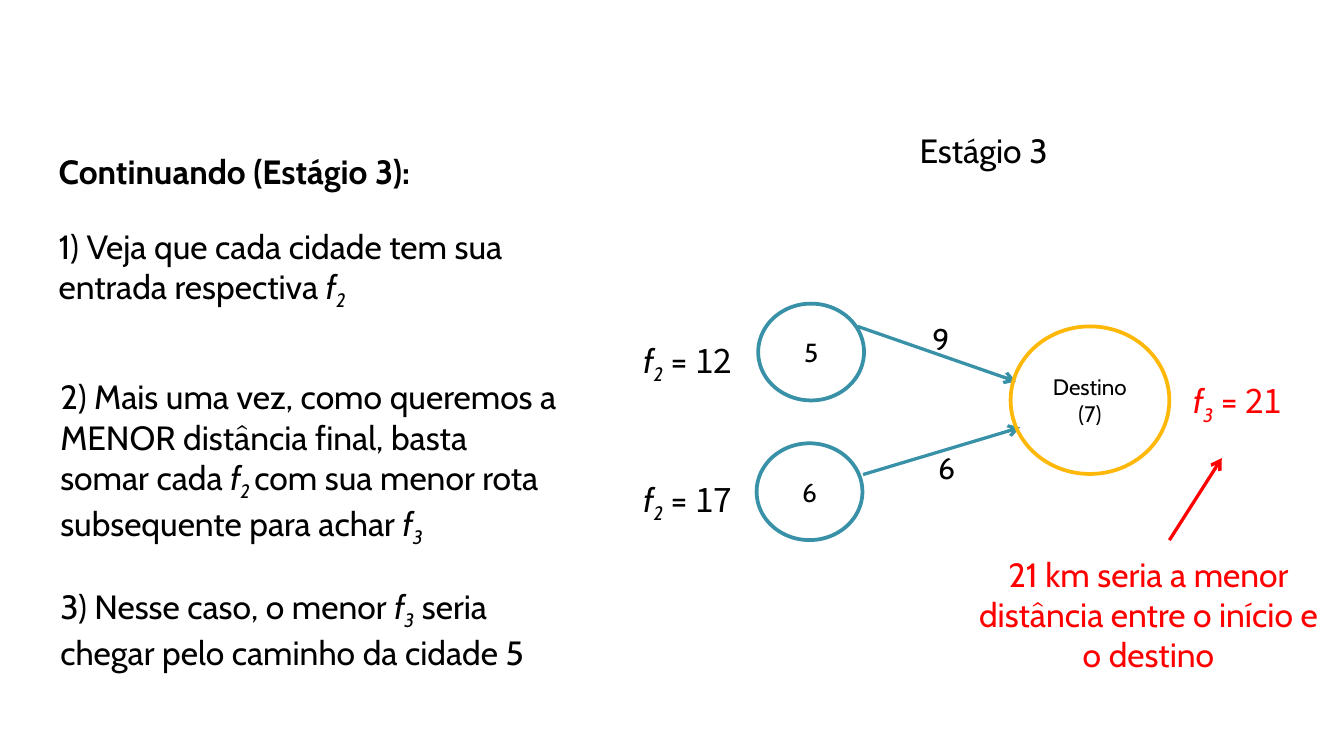
from dataclasses import dataclass

import pptx
import pptx.dml.color
import pptx.enum.shapes
import pptx.enum.text
import pptx.oxml
import pptx.oxml.ns
import pptx.util

Cm = pptx.util.Cm
Pt = pptx.util.Pt
ALIGN = pptx.enum.text.PP_ALIGN

COLORS = {"text": "000000", "city": "3891A7", "goal": "FEB80A", "result": "FF0000"}
FONT = "Cabin"
NUMBER_FONT = "Noto Sans CJK SC"


@dataclass
class Run:
    text: str
    font: str = FONT
    bold: bool = False
    italic: bool = False
    sub: bool = False


@dataclass
class Label:
    x: float
    y: float
    w: float
    h: float
    runs: list[Run]
    size: int = 18
    color: str = "text"
    center: bool = False


@dataclass
class Node:
    x: float
    y: float
    w: float
    h: float
    lines: list[str]
    size: int
    color: str


@dataclass
class Arrow:
    x1: float
    y1: float
    x2: float
    y2: float
    color: str


def rgb(name: str) -> pptx.dml.color.RGBColor:
    return pptx.dml.color.RGBColor.from_string(COLORS[name])


def f(index: str) -> list[Run]:
    """The symbol f with a subscript index."""
    return [Run("f", italic=True), Run(index, italic=True, sub=True)]


def f_value(index: str, value: str) -> list[Run]:
    return [*f(index), Run(" = "), Run(value, font=NUMBER_FONT)]


def add_runs(p, runs: list[Run], size: int, color: str, center: bool) -> None:
    p.alignment = ALIGN.CENTER if center else ALIGN.LEFT
    for run in runs:
        r = p.add_run()
        r.text = run.text
        r.font.name = run.font
        r.font.size = Pt(size)
        r.font.bold = run.bold
        r.font.italic = run.italic
        r.font.color.rgb = rgb(color)
        if run.sub:
            r.font._element.set("baseline", "-25000")


def draw_label(s, label: Label) -> None:
    sp = s.shapes.add_textbox(Cm(label.x), Cm(label.y), Cm(label.w), Cm(label.h))
    tf = sp.text_frame
    tf.word_wrap = True
    add_runs(tf.paragraphs[0], label.runs, label.size, label.color, label.center)


def draw_node(s, node: Node) -> None:
    sp = s.shapes.add_shape(pptx.enum.shapes.MSO_SHAPE.OVAL,
                            Cm(node.x), Cm(node.y), Cm(node.w), Cm(node.h))
    sp.shadow.inherit = False
    sp.fill.background()
    sp.line.color.rgb = rgb(node.color)
    sp.line.width = Pt(2)
    tf = sp.text_frame
    tf.word_wrap = True
    tf.vertical_anchor = pptx.enum.text.MSO_ANCHOR.MIDDLE
    for i, line in enumerate(node.lines):
        p = tf.add_paragraph() if i else tf.paragraphs[0]
        add_runs(p, [Run(line)], node.size, "text", center=True)


def draw_arrow(s, arrow: Arrow) -> None:
    sp = s.shapes.add_connector(pptx.enum.shapes.MSO_CONNECTOR.STRAIGHT,
                                Cm(arrow.x1), Cm(arrow.y1), Cm(arrow.x2), Cm(arrow.y2))
    sp.line.color.rgb = rgb(arrow.color)
    sp.line.width = Pt(1.75)
    tail = pptx.oxml.parse_xml(f'<a:tailEnd {pptx.oxml.ns.nsdecls("a")} type="arrow"/>')
    sp.line._get_or_add_ln().append(tail)
    effects = pptx.oxml.parse_xml(f'<a:effectLst {pptx.oxml.ns.nsdecls("a")}/>')
    sp._element.spPr.append(effects)


# Headings and explanation on the left
EXPLANATION = [
    Label(15.49, 2.34, 6.2, 1.02, [Run("Estágio 3")], center=True),
    Label(0.86, 2.72, 9.4, 1.02, [Run("Continuando (Estágio 3):", bold=True)]),
    Label(0.86, 4.14, 10, 1.8,
          [Run("1) Veja que cada cidade tem sua entrada respectiva "), *f("2")]),
    Label(0.89, 6.99, 10, 3.33,
          [Run("2) Mais uma vez, como queremos a MENOR distância final, "
               "basta somar cada "), *f("2 "),
           Run("com sua menor rota subsequente para achar "), *f("3")]),
    Label(0.89, 10.95, 10, 1.8,
          [Run("3) Nesse caso, o menor "), *f("3"),
           Run(" seria chegar pelo caminho da cidade 5")]),
]

# Route graph
ARROWS = [
    Arrow(16.31, 8.97, 19.28, 8.08, "city"),
    Arrow(16.21, 6.17, 19.2, 7.21, "city"),
    Arrow(22.1, 10.21, 23.09, 8.66, "result"),
]
NODES = [
    Node(19.1, 6.17, 3, 2.79, ["Destino", "(7)"], 12, "goal"),
    Node(14.33, 5.74, 2, 1.83, ["5"], 14, "city"),
    Node(14.3, 8.38, 2, 1.83, ["6"], 14, "city"),
]
GRAPH_LABELS = [
    Label(11.91, 6.3, 3.2, 1.02, f_value("2", "12")),
    Label(11.91, 8.92, 3.2, 1.02, f_value("2", "17")),
    Label(17.37, 5.94, 0.69, 0.94, [Run("9")], size=16),
    Label(17.48, 8.38, 0.69, 0.94, [Run("6")], size=16),
    Label(22.3, 7.06, 3.2, 1.02, f_value("3", "21"), color="result"),
    Label(18.11, 10.34, 7.19, 2.57,
          [Run("21 km seria a menor distância entre o início e o destino")],
          color="result", center=True),
]


def main() -> None:
    prs = pptx.Presentation()
    prs.slide_width, prs.slide_height = Cm(25.4), Cm(14.29)
    s = prs.slides.add_slide(prs.slide_layouts[6])
    for arrow in ARROWS:
        draw_arrow(s, arrow)
    for node in NODES:
        draw_node(s, node)
    for label in EXPLANATION + GRAPH_LABELS:
        draw_label(s, label)
    prs.save("out.pptx")


if __name__ == "__main__":
    main()
